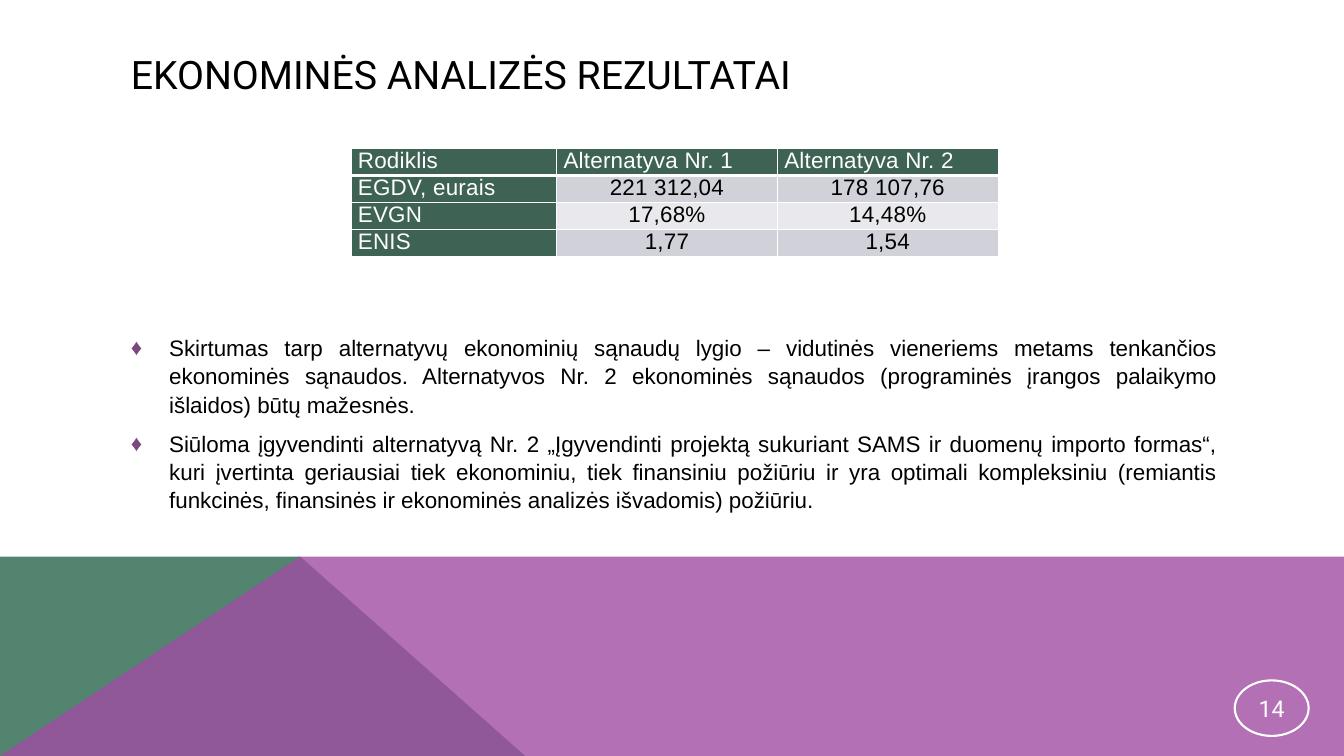
from dataclasses import dataclass

from lxml import etree
from pptx import Presentation
from pptx.dml.color import RGBColor
from pptx.enum.shapes import MSO_SHAPE
from pptx.enum.text import MSO_ANCHOR, PP_ALIGN
from pptx.oxml.ns import qn
from pptx.util import Emu, Inches, Pt

OVAL = MSO_SHAPE.OVAL
MIDDLE = MSO_ANCHOR.MIDDLE
LEFT, CENTER, JUSTIFY = PP_ALIGN.LEFT, PP_ALIGN.CENTER, PP_ALIGN.JUSTIFY

SLIDE_WIDTH, SLIDE_HEIGHT = Inches(13.33), Inches(7.5)
GRID = 100  # the slide is divided into 100 columns and 100 rows

COLORS = {
    "white": "FFFFFF",
    "black": "000000",
    "green": "528470",
    "purple": "A04DA3",
    "bullet": "7A4880",
    "heading": "3E6354",
    "band_dark": "D1D1DA",
    "band_light": "E9E9ED",
}


@dataclass(frozen=True)
class Area:
    """A rectangle in grid columns and rows."""
    col: float
    row: float
    cols: float
    rows: float

    def emu(self) -> tuple[Emu, Emu, Emu, Emu]:
        return x(self.col), y(self.row), x(self.cols), y(self.rows)


@dataclass(frozen=True)
class Band:
    """A decorative polygon at the foot of the slide."""
    corners: tuple[tuple[float, float], ...]
    color: str
    opacity: int = 100


@dataclass(frozen=True)
class Style:
    font: str
    size: float
    color: str
    align: int = LEFT
    tracking: int = 0  # hundredths of a point


TITLE = "EKONOMINĖS ANALIZĖS REZULTATAI"
TITLE_AREA = Area(9, 5.73, 82.3, 8)
TITLE_STYLE = Style("Roboto", 28, "black")

FINDINGS = (
    "Skirtumas tarp alternatyvų ekonominių sąnaudų lygio – vidutinės vieneriems metams "
    "tenkančios ekonominės sąnaudos. Alternatyvos Nr. 2 ekonominės sąnaudos (programinės "
    "įrangos palaikymo išlaidos) būtų mažesnės.",
    "Siūloma įgyvendinti alternatyvą Nr. 2 „Įgyvendinti projektą sukuriant SAMS ir duomenų "
    "importo formas“, kuri įvertinta geriausiai tiek ekonominiu, tiek finansiniu požiūriu ir "
    "yra optimali kompleksiniu (remiantis funkcinės, finansinės ir ekonominės analizės "
    "išvadomis) požiūriu.",
)
FINDINGS_AREA = Area(9, 43.4, 82.3, 28.1)
FINDINGS_STYLE = Style("Arial", 16, "black", JUSTIFY)

INDICATORS = (
    ("Rodiklis", "Alternatyva Nr. 1", "Alternatyva Nr. 2"),
    ("EGDV, eurais", "221 312,04", "178 107,76"),
    ("EVGN", "17,68%", "14,48%"),
    ("ENIS", "1,77", "1,54"),
)
INDICATOR_COLS = (15.3, 16.43, 16.43)
INDICATOR_ROW = 3.3
INDICATORS_AREA = Area(26.11, 19.65, sum(INDICATOR_COLS), INDICATOR_ROW * len(INDICATORS))
LABEL_STYLE = Style("Arial", 16, "white", JUSTIFY, 20)
VALUE_STYLE = Style("Arial", 16, "black", CENTER, 20)

FOOT_TOP = 73.65
BANDS = (
    Band(((0, 100), (0, FOOT_TOP), (22.35, FOOT_TOP), (39.08, 100)), "green"),
    Band(((0, 100), (22.3, FOOT_TOP), (100, FOOT_TOP), (100, 100)), "purple", 80),
)

PAGE_NUMBER = "14"
PAGE_NUMBER_AREA = Area(91.87, 90, 5.5, 7.35)
PAGE_NUMBER_STYLE = Style("Roboto", 16.5, "white", CENTER)


def x(cols: float) -> Emu:
    return Emu(round(SLIDE_WIDTH * cols / GRID))


def y(rows: float) -> Emu:
    return Emu(round(SLIDE_HEIGHT * rows / GRID))


def rgb(name: str) -> RGBColor:
    return RGBColor.from_string(COLORS[name])


def set_margins(holder, side: float, top: float) -> None:
    holder.margin_left = holder.margin_right = Inches(side)
    holder.margin_top = holder.margin_bottom = Inches(top)


def format_paragraph(paragraph, style: Style) -> None:
    paragraph.alignment = style.align
    for run in paragraph.runs:
        run.font.name = style.font
        run.font.size = Pt(style.size)
        run.font.color.rgb = rgb(style.color)
        if style.tracking:
            run.font._element.set("spc", str(style.tracking))


def add_band(slide, band: Band) -> None:
    points = [(x(col), y(row)) for col, row in band.corners]
    builder = slide.shapes.build_freeform(*points[0])
    builder.add_line_segments(points[1:], close=True)
    polygon = builder.convert_to_shape()
    polygon.shadow.inherit = False
    polygon.line.fill.background()
    polygon.fill.solid()
    polygon.fill.fore_color.rgb = rgb(band.color)
    if band.opacity < 100:
        tint = polygon._element.spPr.find(qn("a:solidFill"))[0]
        etree.SubElement(tint, qn("a:alpha"), val=str(band.opacity * 1000))


def add_title(slide) -> None:
    frame = slide.shapes.add_textbox(*TITLE_AREA.emu()).text_frame
    frame.word_wrap = True
    frame.vertical_anchor = MIDDLE
    frame.text = TITLE
    format_paragraph(frame.paragraphs[0], TITLE_STYLE)


def add_diamond_bullet(paragraph) -> None:
    indent = Inches(0.38)
    properties = paragraph._p.get_or_add_pPr()
    properties.set("marL", str(indent))
    properties.set("indent", str(-indent))
    tint = etree.SubElement(properties, qn("a:buClr"))
    etree.SubElement(tint, qn("a:srgbClr"), val=COLORS["bullet"])
    etree.SubElement(properties, qn("a:buFont"), typeface="Arial")
    etree.SubElement(properties, qn("a:buChar"), char="♦")


def add_findings(slide) -> None:
    frame = slide.shapes.add_textbox(*FINDINGS_AREA.emu()).text_frame
    frame.word_wrap = True
    frame.text = "\n".join(FINDINGS)
    for index, paragraph in enumerate(frame.paragraphs):
        format_paragraph(paragraph, FINDINGS_STYLE)
        paragraph.line_spacing = 1.05
        paragraph.space_before = Pt(8 if index else 0)
        add_diamond_bullet(paragraph)


def set_borders(cell, bottom: float, top: float) -> None:
    """Draw white cell borders; widths are in points."""
    properties = cell._tc.get_or_add_tcPr()
    widths = {"a:lnL": 1, "a:lnR": 1, "a:lnT": top, "a:lnB": bottom}
    for position, (tag, width) in enumerate(widths.items()):
        border = etree.Element(qn(tag), w=str(Pt(width)))
        fill = etree.SubElement(border, qn("a:solidFill"))
        etree.SubElement(fill, qn("a:srgbClr"), val=COLORS["white"])
        properties.insert(position, border)


def add_indicators(slide) -> None:
    table = slide.shapes.add_table(
        len(INDICATORS), len(INDICATOR_COLS), *INDICATORS_AREA.emu()).table
    for column, cols in zip(table.columns, INDICATOR_COLS):
        column.width = x(cols)
    for r, entries in enumerate(INDICATORS):
        table.rows[r].height = y(INDICATOR_ROW)
        for c, entry in enumerate(entries):
            is_label = r == 0 or c == 0
            band = "band_dark" if r % 2 else "band_light"
            cell = table.cell(r, c)
            set_margins(cell, 0.07, 0)
            cell.text_frame.text = entry
            format_paragraph(cell.text_frame.paragraphs[0],
                             LABEL_STYLE if is_label else VALUE_STYLE)
            cell.fill.solid()
            cell.fill.fore_color.rgb = rgb("heading" if is_label else band)
            set_borders(cell, bottom=3 if r == 0 else 1, top=3 if r == 1 else 1)


def add_page_number(slide) -> None:
    badge = slide.shapes.add_shape(OVAL, *PAGE_NUMBER_AREA.emu())
    badge.shadow.inherit = False
    badge.fill.background()
    badge.line.color.rgb = rgb("white")
    badge.line.width = Pt(1.5)
    frame = badge.text_frame
    set_margins(frame, 0.01, 0.01)
    frame.vertical_anchor = MIDDLE
    frame.text = PAGE_NUMBER
    format_paragraph(frame.paragraphs[0], PAGE_NUMBER_STYLE)


def main() -> None:
    deck = Presentation()
    deck.slide_width, deck.slide_height = SLIDE_WIDTH, SLIDE_HEIGHT
    slide = deck.slides.add_slide(deck.slide_layouts[6])
    for band in BANDS:
        add_band(slide, band)
    add_title(slide)
    add_findings(slide)
    add_indicators(slide)
    add_page_number(slide)
    deck.save("out.pptx")


if __name__ == "__main__":
    main()
